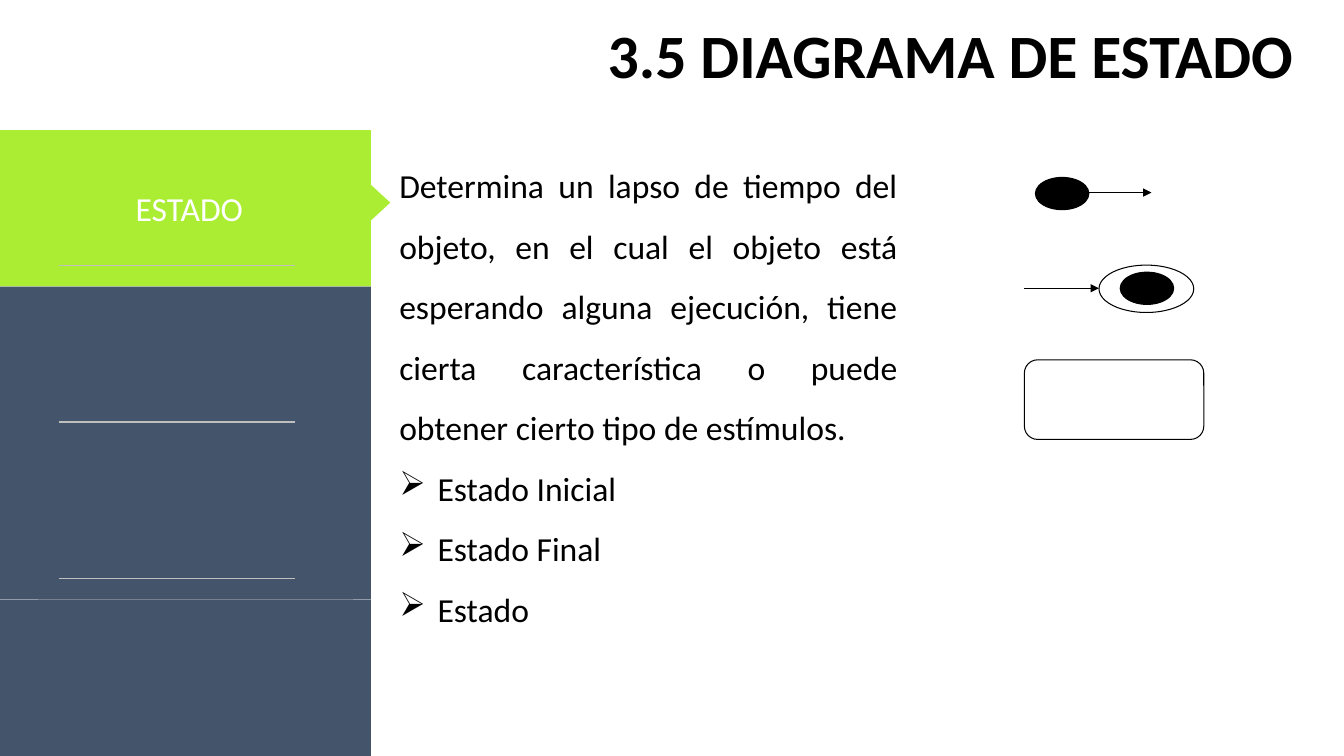
from lxml.etree import SubElement
from pptx import Presentation
from pptx.dml.color import RGBColor
from pptx.enum.shapes import MSO_CONNECTOR, MSO_SHAPE
from pptx.enum.text import MSO_ANCHOR, PP_ALIGN
from pptx.oxml.ns import qn
from pptx.util import Inches, Pt

HUES = {"ink": "000000", "white": "FFFFFF", "lime": "ABED33",
        "slate": "44546A", "gray": "BFBFBF"}


class Sheet:
    """Draws on one slide; lengths are percent of its width and height."""

    def __init__(self, deck, font):
        self.deck, self.font = deck, font
        self.slide = deck.slides.add_slide(deck.slide_layouts[6])
        self.shapes = self.slide.shapes

    def spots(self, *sizes):
        sides = (self.deck.slide_width, self.deck.slide_height) * 2
        return [round(side * size / 100) for side, size in zip(sides, sizes)]

    def hue(self, name):
        return RGBColor.from_string(HUES[name])

    def apply(self, item, style):
        for name, value in style.items():
            setattr(item, name, value)

    def words(self, par, text, size, hue="ink", bold=False, **style):
        self.apply(par, style)
        run = par.add_run()
        run.text = text
        self.apply(run.font, {"name": self.font, "size": Pt(size), "bold": bold})
        run.font.color.rgb = self.hue(hue)

    def bullet(self, par, mark, indent):
        props = par._p.get_or_add_pPr()
        props.set("marL", str(indent))
        props.set("indent", str(-indent))
        SubElement(props, qn("a:buChar")).set("char", mark)

    def text(self, box, **style):
        frame = self.shapes.add_textbox(*self.spots(*box)).text_frame
        self.apply(frame, {"word_wrap": True, **style})
        return frame

    def shape(self, kind, box, fill=None, line=None, turn=0):
        item = self.shapes.add_shape(kind, *self.spots(*box))
        item.shadow.inherit = False
        item.rotation = turn
        if fill:
            item.fill.solid()
            item.fill.fore_color.rgb = self.hue(fill)
        else:
            item.fill.background()
        if line:
            item.line.color.rgb = self.hue(line)
            item.line.width = Pt(0.75)
        else:
            item.line.fill.background()
        return item

    def line(self, ends, hue, width, arrow=False):
        item = self.shapes.add_connector(MSO_CONNECTOR.STRAIGHT, *self.spots(*ends))
        item.line.color.rgb = self.hue(hue)
        item.line.width = Pt(width)
        props = item._element.spPr
        if arrow:
            SubElement(props.find(qn("a:ln")), qn("a:tailEnd")).set("type", "triangle")
        SubElement(props, qn("a:effectLst"))


def main():
    deck = Presentation()
    deck.slide_width, deck.slide_height = Inches(13.33), Inches(7.5)
    sheet = Sheet(deck, "Calibri")

    # Title
    title = sheet.text((2.85, 4.13, 94.15, 7.33), vertical_anchor=MSO_ANCHOR.MIDDLE)
    sheet.words(title.paragraphs[0], "3.5 DIAGRAMA DE ESTADO", 44, bold=True,
                alignment=PP_ALIGN.RIGHT, line_spacing=0.9)

    # Side menu: four equal panels, the first one active
    top, step = 17.2, 20.7
    sheet.shape(MSO_SHAPE.ISOSCELES_TRIANGLE, (26.26, 25.07, 3.6, 3.47), "lime", turn=90)
    sheet.line((2.85, top + 3 * step, 26.26, top + 3 * step), "gray", 1)
    panels = [sheet.shape(MSO_SHAPE.RECTANGLE, (0, top + row * step, 27.61, step), fill)
              for row, fill in enumerate(("lime", "slate", "slate", "slate"))]
    for row in range(3):
        level = top + row * step + 17.9
        sheet.line((4.4, level, 21.98, level), "gray", 1)
    label = panels[0].text_frame
    label.vertical_anchor = MSO_ANCHOR.MIDDLE
    sheet.words(label.paragraphs[0], " ESTADO", 24, "white", alignment=PP_ALIGN.CENTER)

    # Definition and list of states
    flush = {"margin_" + side: 0 for side in ("left", "top", "right", "bottom")}
    body = sheet.text((29.71, 19.2, 37.06, 61.87), **flush)
    sheet.words(body.paragraphs[0],
                "Determina un lapso de tiempo del objeto, en el cual el objeto está "
                "esperando alguna ejecución, tiene cierta característica o puede "
                "obtener cierto tipo de estímulos. ",
                24, alignment=PP_ALIGN.JUSTIFY, line_spacing=1.5)
    for state in ("Estado Inicial", "Estado Final", "Estado"):
        par = body.add_paragraph()
        sheet.words(par, state, 24, line_spacing=1.5)
        sheet.bullet(par, "➢", Inches(0.38))

    # State symbols: start, end and plain state
    for left, head in ((77.04, 23.47), (83.35, 36)):
        sheet.shape(MSO_SHAPE.OVAL, (left, head, 3.98, 4.27), "ink", "ink")
    sheet.shape(MSO_SHAPE.OVAL, (81.77, 35.07, 7.05, 6.27), line="ink")
    for start, end, level in ((80.95, 85.67, 25.47), (76.22, 81.77, 38.13)):
        sheet.line((start, level, end, level), "ink", 0.75, arrow=True)
    sheet.shape(MSO_SHAPE.ROUNDED_RECTANGLE, (76.22, 47.6, 13.35, 10.53), line="ink")

    deck.save("out.pptx")


if __name__ == "__main__":
    main()
